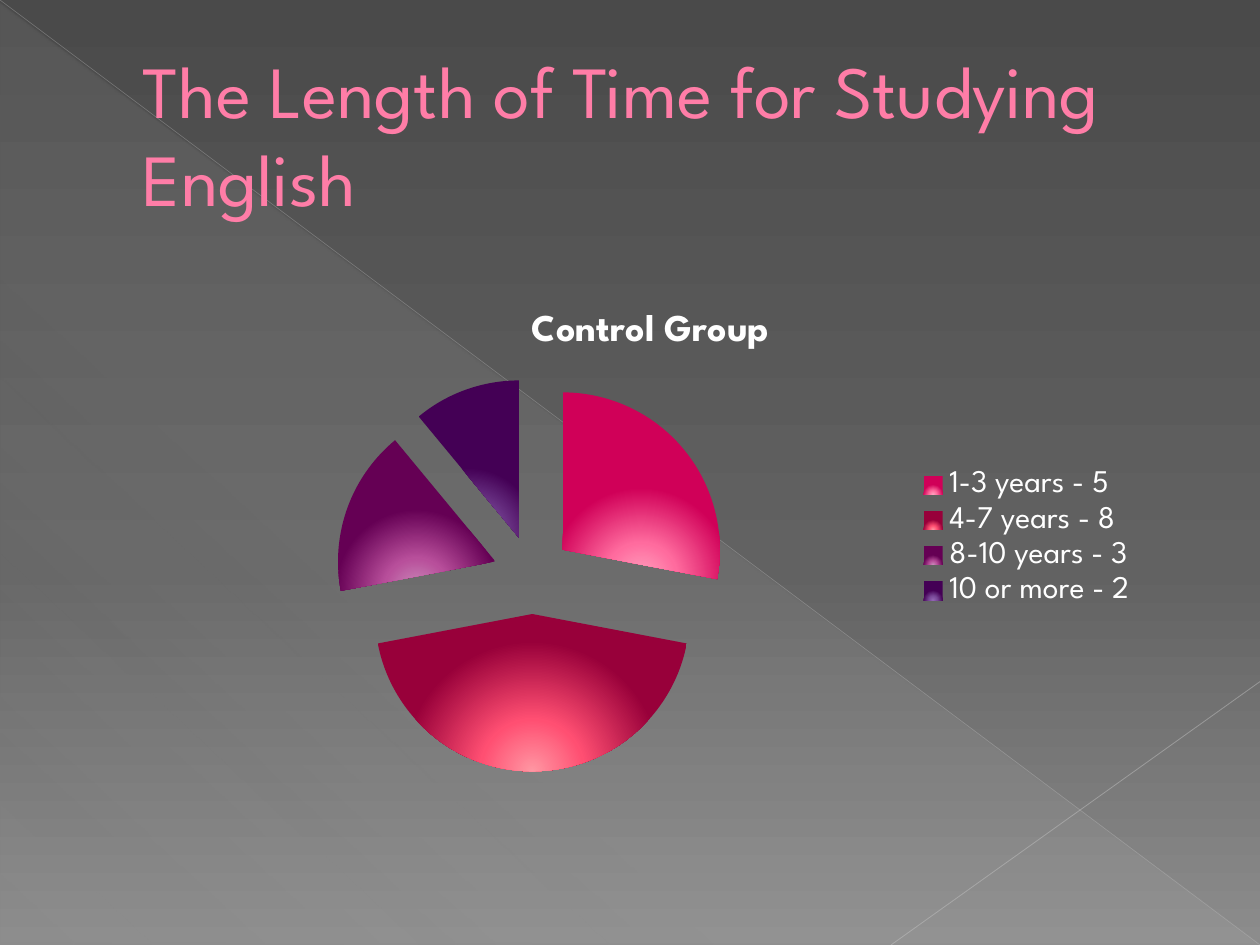
from dataclasses import dataclass

from lxml.etree import SubElement
from pptx import Presentation
from pptx.chart.data import CategoryChartData
from pptx.dml.color import RGBColor
from pptx.enum.chart import XL_CHART_TYPE, XL_LEGEND_POSITION
from pptx.enum.shapes import MSO_CONNECTOR, MSO_SHAPE
from pptx.enum.text import MSO_ANCHOR, MSO_AUTO_SIZE, PP_ALIGN
from pptx.oxml.ns import qn
from pptx.util import Cm, Pt


@dataclass(frozen=True)
class Theme:
    """Colours, gradients, font and type sizes of the slide."""
    font: str = "League Spartan"
    title_size: float = 42
    chart_title_size: float = 21.6
    chart_size: float = 18
    title: str = "FF7DA7"
    title_outline: str = "B12761"
    text: str = "FFFFFF"
    falling_line: str = "BFBFBF"
    rising_line: str = "C6C6C6"
    background: tuple = ((0, "4A4A4A", 100), (60, "626262", 100), (100, "8C8C8C", 100))
    triangle: tuple = ((0, "D2D2D2", 10), (70, "D2D2D2", 8), (100, "D2D2D2", 1))
    slices: tuple = (
        ("FFA3C0", "FF6B9E", "D00058"),
        ("FF97A3", "FF4F72", "98003A"),
        ("CB8DBB", "B84F9B", "650054"),
        ("9468B5", "7A4A9A", "440055"),
    )


THEME = Theme()


def add_color(parent, color, alpha=100):
    """Append an RGB colour with its opacity in percent."""
    clr = SubElement(parent, qn("a:srgbClr"), val=color)
    if alpha < 100:
        SubElement(clr, qn("a:alpha"), val=str(alpha * 1000))


def set_gradient(grad, stops, angle=None):
    """Fill a gradient with stops, linear at an angle or radial from the bottom."""
    for child in list(grad):
        grad.remove(child)
    gs_lst = SubElement(grad, qn("a:gsLst"))
    for pos, color, alpha in stops:
        add_color(SubElement(gs_lst, qn("a:gs"), pos=str(pos * 1000)), color, alpha)
    if angle is None:
        shade = SubElement(grad, qn("a:path"), path="circle")
        SubElement(shade, qn("a:fillToRect"), l="50000", t="100000", r="50000", b="0")
    else:
        SubElement(grad, qn("a:lin"), ang=str(angle * 60000), scaled="0")


def set_font(font, size, color, bold=False):
    """Apply the theme font with a size and colour."""
    font.name = THEME.font
    font.size = Pt(size)
    font.bold = bold
    font.color.rgb = RGBColor.from_string(color)


def add_line(s, start, end, color, width, alpha):
    """Draw a translucent line without shadow."""
    ln = s.shapes.add_connector(MSO_CONNECTOR.STRAIGHT, *start, *end)
    ln.line.width = Pt(width)
    ln.line.color.rgb = RGBColor.from_string(color)
    clr = next(ln.element.spPr.iter(qn("a:srgbClr")))
    SubElement(clr, qn("a:alpha"), val=str(alpha * 1000))
    SubElement(ln.element.spPr, qn("a:effectLst"))
    return ln


def add_backdrop(s, x, y, w, h):
    """Paint the background, the pale triangle and two crossing lines."""
    s.background.fill.gradient()
    set_gradient(next(s.element.iter(qn("a:gradFill"))), THEME.background, 90)
    sp = s.shapes.add_shape(MSO_SHAPE.RIGHT_TRIANGLE, x, y + Cm(0.05), w, h - Cm(0.05))
    sp.shadow.inherit = False
    sp.line.fill.background()
    sp.fill.gradient()
    set_gradient(next(sp.element.iter(qn("a:gradFill"))), THEME.triangle, 133)
    falling = add_line(s, (x, y), (x + w, y + h), THEME.falling_line, 0.39, 35)
    rising = add_line(s, (x + w, y + Cm(13.74)), (x + Cm(17.96), y + h),
                      THEME.rising_line, 0.47, 45)
    for part in (sp, falling, rising):
        s.shapes.title.element.addprevious(part.element)


def add_title(s, x, y, w, h, text):
    """Place and format the title placeholder."""
    title = s.shapes.title
    title.left, title.top, title.width, title.height = x, y, w, h
    tf = title.text_frame
    tf.word_wrap = True
    tf.auto_size = MSO_AUTO_SIZE.NONE
    tf.vertical_anchor = MSO_ANCHOR.MIDDLE
    p = tf.paragraphs[0]
    p.alignment = PP_ALIGN.LEFT
    pPr = p._p.get_or_add_pPr()
    pPr.set("marL", str(Cm(1.35)))
    pPr.set("indent", "0")
    r = p.add_run()
    r.text = text
    set_font(r.font, THEME.title_size, THEME.title)
    rPr = r._r.get_or_add_rPr()
    ln = SubElement(rPr, qn("a:ln"), w=str(Pt(0.5)))
    add_color(SubElement(ln, qn("a:solidFill")), THEME.title_outline)
    rPr.insert(0, ln)


def add_pie(s, x, y, w, h, name, values):
    """Add an exploded pie with a title and a legend on the right."""
    data = CategoryChartData()
    data.categories = list(values)
    data.add_series(name, list(values.values()))
    chart = s.shapes.add_chart(XL_CHART_TYPE.PIE_EXPLODED, x, y, w, h, data).chart
    set_font(chart.font, THEME.chart_size, THEME.text)
    chart.has_title = True
    r = chart.chart_title.text_frame.paragraphs[0].add_run()
    r.text = name
    set_font(r.font, THEME.chart_title_size, THEME.text, bold=True)
    chart.has_legend = True
    chart.legend.position = XL_LEGEND_POSITION.RIGHT
    chart.legend.include_in_layout = False
    set_font(chart.legend.font, THEME.chart_size, THEME.text)
    plot = chart.plots[0]
    plot.vary_by_categories = True
    for i in range(len(values)):
        fmt = plot.series[0].points[i].format
        fmt.fill.gradient()
        fmt.line.fill.background()
    for explosion in chart.element.iter(qn("c:explosion")):
        explosion.set("val", "25")
    for grad, colors in zip(chart.element.iter(qn("a:gradFill")), THEME.slices):
        set_gradient(grad, [(pos, c, 100) for pos, c in zip((0, 30, 75), colors)])


def main():
    """Build the slide and save it."""
    prs = Presentation()
    prs.slide_width, prs.slide_height = Cm(25.4), Cm(19.05)
    s = prs.slides.add_slide(prs.slide_layouts[5])
    add_backdrop(s, 0, 0, prs.slide_width, prs.slide_height)
    add_title(s, Cm(1.27), Cm(0.74), Cm(22.86), Cm(3.89),
              "The Length of Time for Studying English")
    add_pie(s, Cm(3.05), Cm(5.79), Cm(20.14), Cm(10.11), "Control Group",
            {"1-3 years - 5": 28, "4-7 years - 8": 44,
             "8-10 years - 3": 17, "10 or more - 2": 11})
    prs.save("out.pptx")


if __name__ == "__main__":
    main()
